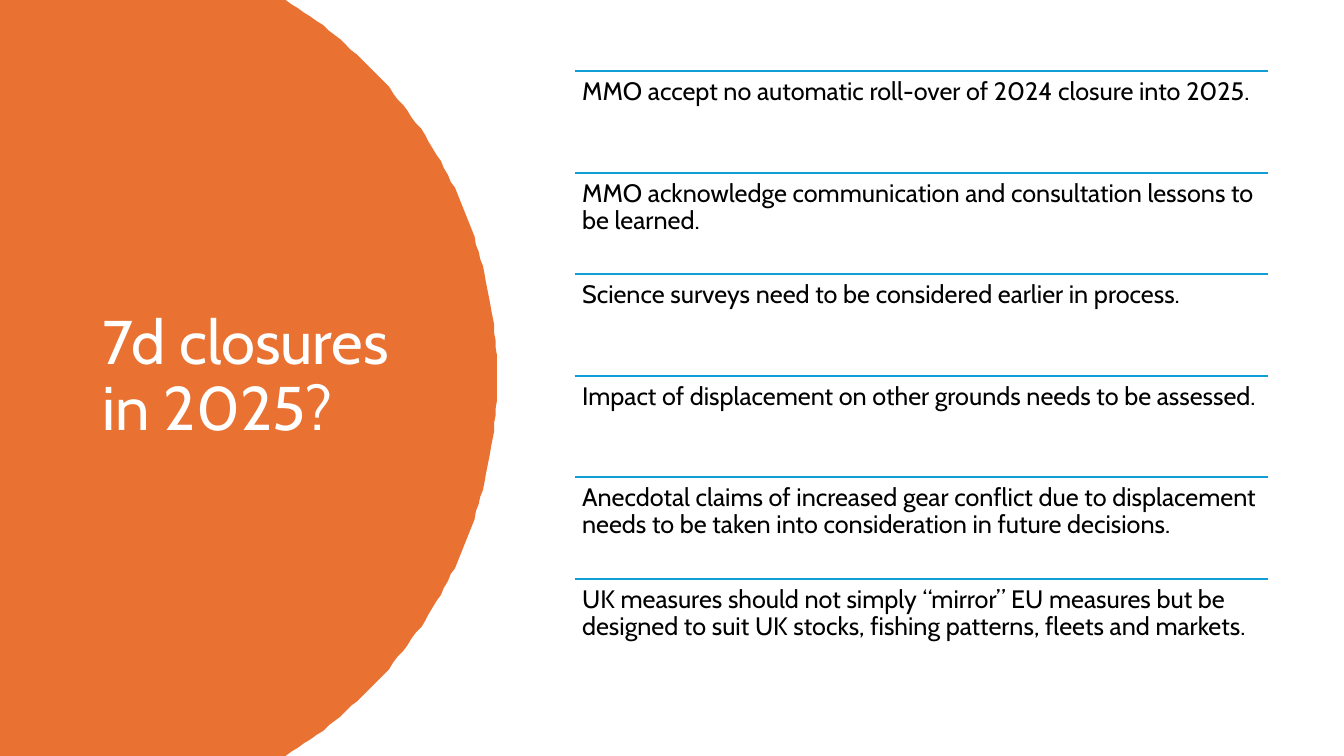
from math import asin, cos, sin

from lxml.etree import SubElement
from pptx import Presentation
from pptx.dml.color import RGBColor
from pptx.enum.shapes import MSO_CONNECTOR as Connector
from pptx.enum.text import MSO_ANCHOR as Anchor, MSO_AUTO_SIZE as AutoSize, PP_ALIGN as Align
from pptx.oxml.ns import qn
from pptx.util import Pt

WIDTH, HEIGHT = 960, 540
ARC_CENTRE, ARC_RADIUS, ARC_STEPS = 38.2, 316.8, 120
LIST_LEFT, LIST_TOP, LIST_WIDTH, LIST_PITCH = 410.4, 51, 495.4, 72.5
POINTS = [
    "MMO accept no automatic roll-over of 2024 closure into 2025.",
    "MMO acknowledge communication and consultation lessons to be learned.",
    "Science surveys need to be considered earlier in process.",
    "Impact of displacement on other grounds needs to be assessed.",
    "Anecdotal claims of increased gear conflict due to displacement "
    "needs to be taken into consideration in future decisions.",
    "UK measures should not simply “mirror” EU measures but be designed "
    "to suit UK stocks, fishing patterns, fleets and markets.",
]


def paint(color, value):
    color.rgb = RGBColor.from_string(value)


class ClosureSlide:
    font = "Cabin"
    orange, blue, white, black = "E97132", "0F9ED5", "FFFFFF", "000000"

    def __init__(self, page):
        self.page = page

    def set_text(self, box, text, size, color, inset, anchor):
        frame = box.text_frame
        frame.text = text
        frame.word_wrap = True
        frame.auto_size = AutoSize.NONE
        frame.vertical_anchor = anchor
        frame.margin_left = frame.margin_right = Pt(inset)
        frame.margin_top = frame.margin_bottom = Pt(inset)
        para = frame.paragraphs[0]
        para.alignment = Align.LEFT
        para.line_spacing = 0.9
        para.font.name = self.font
        para.font.size = Pt(size)
        paint(para.font.color, color)

    def title(self, text, left, top, width, height):
        box = self.page.shapes.title
        box.left, box.top = Pt(left), Pt(top)
        box.width, box.height = Pt(width), Pt(height)
        self.set_text(box, text, 44, self.white, 7.2, Anchor.MIDDLE)

    def round_panel(self):
        middle = HEIGHT / 2
        half_angle = asin(middle / ARC_RADIUS)
        angles = [half_angle * (2 * step / ARC_STEPS - 1) for step in range(ARC_STEPS + 1)]
        arc = [(ARC_CENTRE + ARC_RADIUS * cos(angle), middle + ARC_RADIUS * sin(angle))
               for angle in angles]
        outline = self.page.shapes.build_freeform(0, 0, scale=Pt(1))
        outline.add_line_segments(arc + [(0, HEIGHT)], close=True)
        panel = outline.convert_to_shape()
        panel.shadow.inherit = False
        panel.fill.solid()
        paint(panel.fill.fore_color, self.orange)
        panel.line.fill.background()
        self.page.shapes.title.element.addprevious(panel.element)

    def rule(self, left, top, width):
        line = self.page.shapes.add_connector(
            Connector.STRAIGHT, Pt(left), Pt(top), Pt(left + width), Pt(top))
        line.line.width = Pt(1.5)
        paint(line.line.color, self.blue)
        SubElement(line.element.spPr, qn("a:effectLst"))

    def item(self, text, left, top, width, height):
        self.rule(left, top, width)
        box = self.page.shapes.add_textbox(Pt(left), Pt(top), Pt(width), Pt(height))
        self.set_text(box, text, 18, self.black, 5.4, Anchor.TOP)


def main():
    deck = Presentation()
    deck.slide_width, deck.slide_height = Pt(WIDTH), Pt(HEIGHT)
    slide = ClosureSlide(deck.slides.add_slide(deck.slide_layouts.get_by_name("Title Only")))
    slide.round_panel()
    slide.title("7d closures in 2025?", 66, 50.4, 232.6, 438.5)
    for row, text in enumerate(POINTS):
        slide.item(text, LIST_LEFT, LIST_TOP + row * LIST_PITCH, LIST_WIDTH, LIST_PITCH)
    deck.save("out.pptx")


if __name__ == "__main__":
    main()
